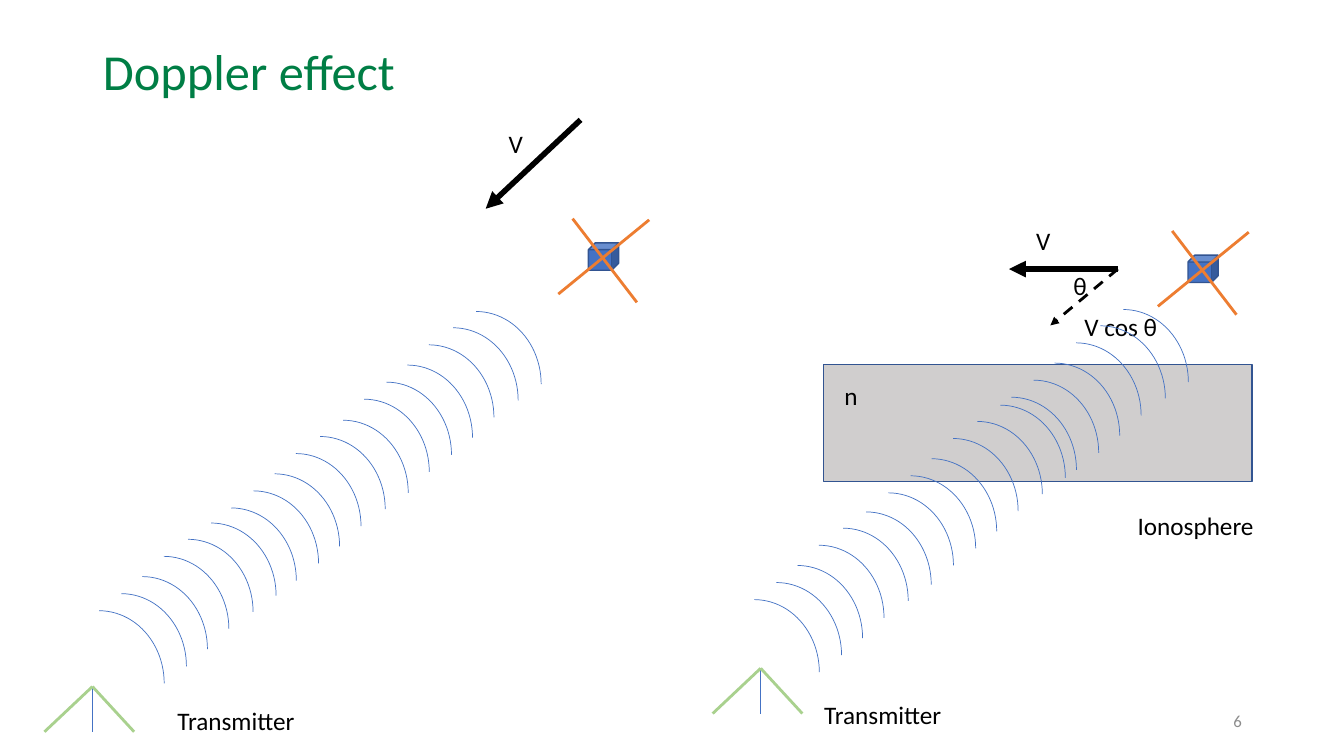
from dataclasses import dataclass

from lxml import etree
from pptx import Presentation
from pptx.dml.color import RGBColor
from pptx.enum import dml, shapes, text
from pptx.oxml import ns
from pptx.util import Cm, Pt


@dataclass(frozen=True)
class Theme:
    font: str = "Calibri"
    title_size: int = 36
    label_size: int = 18
    number_size: int = 12
    title: str = "007E45"
    ink: str = "000000"
    number: str = "8C8C8C"
    wave: str = "4472C4"
    outline: str = "325491"
    panel: str = "ED7D31"
    antenna: str = "A9D18E"
    layer: str = "D0CECE"


THEME = Theme()
WAVE_STEPS = [(0, 0), (0.56, -0.43), (1.09, -0.86), (1.63, -1.37), (2.24, -1.8), (2.82, -2.21)]


# Basic parts
def style_text(paragraph, size, color):
    for run in paragraph.runs:
        run.font.name = THEME.font
        run.font.size = Pt(size)
        run.font.color.rgb = RGBColor.from_string(color)


def add_label(container, wording, left, top, width):
    box = container.shapes.add_textbox(Cm(left), Cm(top), Cm(width), Cm(1.02))
    frame = box.text_frame
    frame.text = wording
    frame.word_wrap = False
    frame.auto_size = text.MSO_AUTO_SIZE.SHAPE_TO_FIT_TEXT
    style_text(frame.paragraphs[0], THEME.label_size, THEME.ink)


def add_outline(container, kind, left, top, width, height, fill, color, weight):
    shape = container.shapes.add_shape(kind, Cm(left), Cm(top), Cm(width), Cm(height))
    shape.shadow.inherit = False
    if fill:
        shape.fill.solid()
        shape.fill.fore_color.rgb = RGBColor.from_string(fill)
    else:
        shape.fill.background()
    shape.line.color.rgb = RGBColor.from_string(color)
    shape.line.width = Pt(weight)


def add_line(container, start, end, color, weight, arrow=False, dashed=False):
    line = container.shapes.add_connector(
        shapes.MSO_CONNECTOR.STRAIGHT, *(Cm(value) for value in (*start, *end)))
    line.line.color.rgb = RGBColor.from_string(color)
    line.line.width = Pt(weight)
    if dashed:
        line.line.dash_style = dml.MSO_LINE.DASH
    properties = line.element.spPr
    if arrow:
        outline = properties.find(ns.qn("a:ln"))
        etree.SubElement(outline, ns.qn("a:tailEnd"), type="triangle")
    etree.SubElement(properties, ns.qn("a:effectLst"))


# Diagram parts
def add_wave_train(slide, left, top):
    group = slide.shapes.add_group_shape()
    for across, down in WAVE_STEPS:
        add_outline(group, shapes.MSO_SHAPE.ARC, left + across, top + down,
                    3.28, 3.66, None, THEME.wave, 0.5)


def add_transmitter(slide, left, top):
    group = slide.shapes.add_group_shape()
    apex = (left + 1.21, top)
    base = top + 1.14
    add_line(group, apex, (apex[0], base), THEME.wave, 0.5)
    for foot in (left, left + 2.26):
        add_line(group, apex, (foot, base), THEME.antenna, 2)


def add_satellite(slide, left, top):
    group = slide.shapes.add_group_shape()
    add_outline(group, shapes.MSO_SHAPE.CUBE, left + 0.76, top + 0.61, 0.76, 0.69,
                THEME.wave, THEME.outline, 1)
    add_line(group, (left + 0.36, top), (left + 1.98, top + 2.11), THEME.panel, 2)
    add_line(group, (left, top + 1.9), (left + 2.29, top + 0.03), THEME.panel, 2)


# Slide regions
def add_title(slide, left, top, width, height):
    title = slide.shapes.title
    title.left, title.top, title.width, title.height = map(Cm, (left, top, width, height))
    frame = title.text_frame
    frame.text = "Doppler effect"
    frame.vertical_anchor = text.MSO_ANCHOR.MIDDLE
    paragraph = frame.paragraphs[0]
    paragraph.alignment = text.PP_ALIGN.LEFT
    paragraph.line_spacing = 0.9
    style_text(paragraph, THEME.title_size, THEME.title)


def add_slide_number(slide, left, top, width, height):
    box = slide.shapes.add_textbox(Cm(left), Cm(top), Cm(width), Cm(height))
    frame = box.text_frame
    frame.text = "6"
    frame.word_wrap = True
    frame.vertical_anchor = text.MSO_ANCHOR.MIDDLE
    frame.paragraphs[0].alignment = text.PP_ALIGN.RIGHT
    style_text(frame.paragraphs[0], THEME.number_size, THEME.number)


def add_direct_path(slide, left, top):
    for across, down in [(0.86, 12.39), (4.19, 9.8), (7.54, 7.06)]:
        add_wave_train(slide, left + across, top + down)
    add_transmitter(slide, left + 1.12, top + 14.3)
    add_label(slide, "Transmitter", left + 4.22, top + 14.65, 3.51)
    add_satellite(slide, left + 14.07, top + 2.51)

    # Velocity along the path
    velocity = slide.shapes.add_group_shape()
    add_line(velocity, (left + 14.63, top + 0.02), (left + 12.24, top + 2.26),
             THEME.ink, 4, arrow=True)
    add_label(velocity, "V", left + 12.57, top + 0.12, 0.89)


def add_ionosphere_path(slide, left, top):
    add_outline(slide, shapes.MSO_SHAPE.RECTANGLE, left + 3.75, top + 4.19, 10.8, 2.95,
                THEME.layer, THEME.outline, 1)
    add_satellite(slide, left + 12.18, top + 0.82)

    # Velocity and its component along the path
    velocity = slide.shapes.add_group_shape()
    origin = (left + 11.17, top + 1.78)
    add_line(velocity, origin, (left + 8.43, top + 1.78), THEME.ink, 4, arrow=True)
    add_line(velocity, origin, (left + 9.47, top + 3.2), THEME.ink, 2, arrow=True, dashed=True)
    for wording, across, down, width in [
            ("V cos θ", 10.08, 2.72, 2.36), ("V", 8.86, 0.56, 0.89), ("θ", 9.8, 1.68, 0.86)]:
        add_label(velocity, wording, left + across, top + down, width)

    for across, down in [(0.37, 10.11), (3.75, 7.42), (6.85, 5.01)]:
        add_wave_train(slide, left + across, top + down)
    add_transmitter(slide, left + 0.96, top + 11.84)
    for wording, across, down, width in [
            ("Transmitter", 3.52, 12.5, 3.51), ("Ionosphere", 11.42, 7.73, 3.48),
            ("n", 4.03, 4.45, 0.86)]:
        add_label(slide, wording, left + across, top + down, width)


def main():
    presentation = Presentation()
    presentation.slide_width = Cm(33.87)
    presentation.slide_height = Cm(19.05)
    slide = presentation.slides.add_slide(presentation.slide_layouts.get_by_name("Title Only"))
    add_title(slide, 2.34, 1.02, 8.03, 1.68)
    add_direct_path(slide, 0, 3)
    add_ionosphere_path(slide, 17, 5)
    add_slide_number(slide, 23.93, 17.65, 7.62, 1.01)
    presentation.save("out.pptx")


if __name__ == "__main__":
    main()
